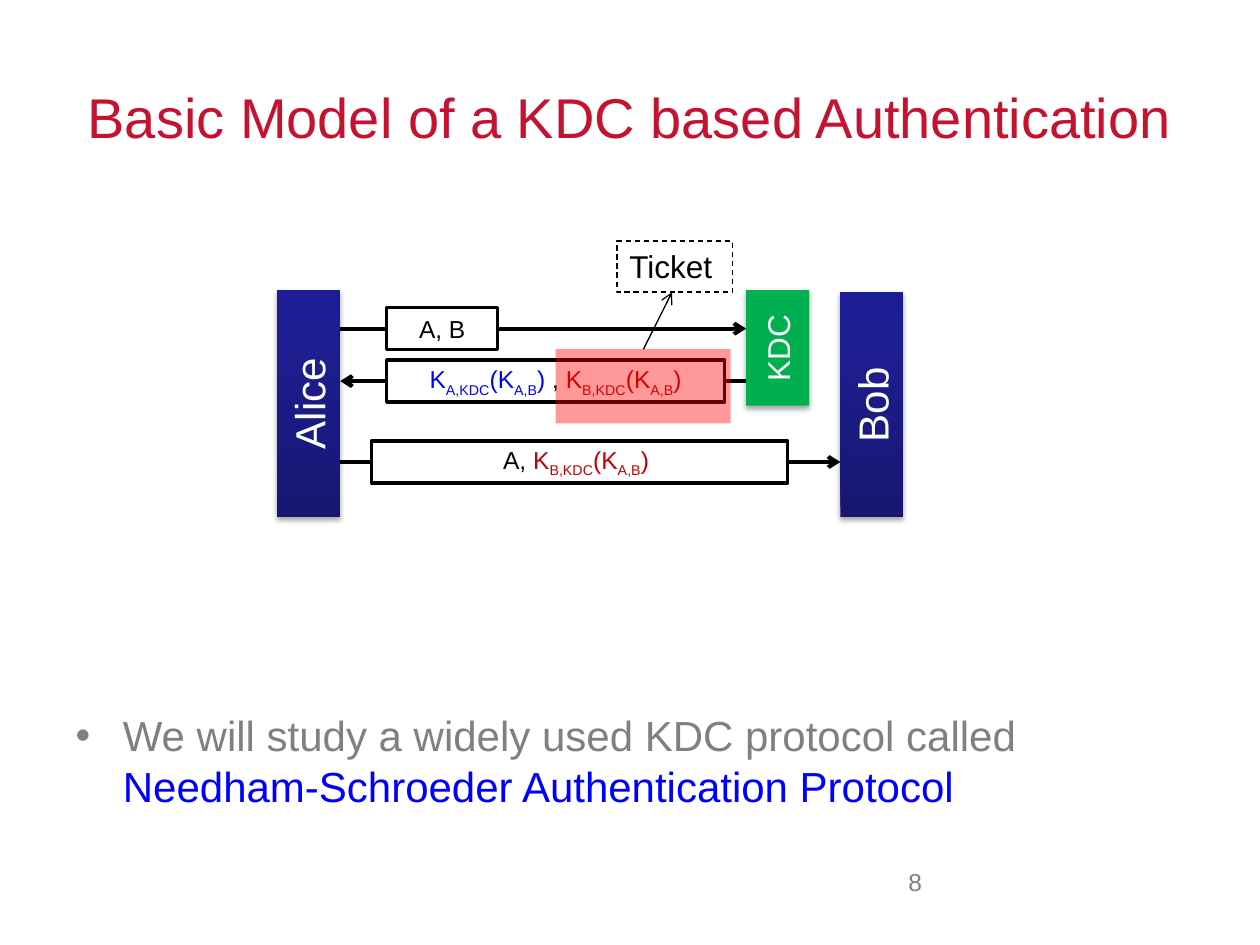
from pptx import Presentation
from pptx.dml.color import RGBColor
from pptx.enum.dml import MSO_LINE
from pptx.enum.shapes import MSO_CONNECTOR, MSO_SHAPE
from pptx.enum.text import MSO_ANCHOR, MSO_AUTO_SIZE, PP_ALIGN
from pptx.oxml import parse_xml
from pptx.oxml.ns import nsdecls
from pptx.util import Pt

RECT = MSO_SHAPE.RECTANGLE
LINE = MSO_CONNECTOR.STRAIGHT
DASH = MSO_LINE.DASH
LEFT, MID, RIGHT = PP_ALIGN.LEFT, PP_ALIGN.CENTER, PP_ALIGN.RIGHT
TOP, CORE = MSO_ANCHOR.TOP, MSO_ANCHOR.MIDDLE
FIXED = MSO_AUTO_SIZE.NONE

HUES = {
    "title": "C41230", "gray": "808080", "blue": "0000FF", "red": "C00000",
    "black": "000000", "white": "FFFFFF", "green": "00B050", "mark": "FF0000",
}
NAVY = {0: "171771", 80: "1E1E93", 100: "1C1C96"}
BAR = 36
ALICE, KDC, BOB = 158.4, 426.4, 480.2
START = ALICE + BAR
BOX = 24


def put(item, **vals):
    """Set each named value on an item."""
    for key, val in vals.items():
        setattr(item, key, val)


def rgb(name):
    """Look up a colour."""
    return RGBColor.from_string(HUES[name])


def node(tag, body="", **atts):
    """Make a drawing element."""
    text = "".join(f' {key}="{val}"' for key, val in atts.items())
    return parse_xml(f"<a:{tag} {nsdecls('a')}{text}>{body}</a:{tag}>")


def place(item, x, y, w, h):
    """Move and size an item."""
    put(item, left=Pt(x), top=Pt(y), width=Pt(w), height=Pt(h))


def write(shape, parts, size, align=MID, anchor=CORE):
    """Write coloured parts, with subscripts between underscores."""
    frame = shape.text_frame
    put(frame, word_wrap=True, auto_size=FIXED, vertical_anchor=anchor)
    para = frame.paragraphs[0]
    para.alignment = align
    for text, hue in parts:
        for spot, bit in enumerate(text.split("_")):
            run = para.add_run()
            run.text = bit
            put(run.font, name="Arial", size=Pt(size))
            run.font.color.rgb = rgb(hue)
            if spot % 2:
                run.font._element.set("baseline", "-25000")
    return para


def block(slide, x, y, w, h, fill=None, line=0):
    """Draw a plain rectangle."""
    shape = slide.shapes.add_shape(RECT, Pt(x), Pt(y), Pt(w), Pt(h))
    shape.shadow.inherit = False
    if fill:
        shape.fill.solid()
        shape.fill.fore_color.rgb = rgb(fill)
    else:
        shape.fill.background()
    if line:
        shape.line.width = Pt(line)
        shape.line.color.rgb = rgb("black")
    else:
        shape.line.fill.background()
    return shape


def party(slide, name, x, y, h, size, fill=None):
    """Draw a shaded bar with upright text."""
    shape = block(slide, x, y, BAR, h, fill)
    props = shape._element.spPr
    if not fill:
        stops = "".join(
            f'<a:gs pos="{pos * 1000}"><a:srgbClr val="{hue}"/></a:gs>'
            for pos, hue in NAVY.items())
        body = f'<a:gsLst>{stops}</a:gsLst><a:lin ang="16200000" scaled="0"/>'
        old = props.find("{*}noFill")
        props.replace(old, node("gradFill", body, rotWithShape=1))
    tint = '<a:srgbClr val="000000"><a:alpha val="35000"/></a:srgbClr>'
    props.find("{*}effectLst").append(node(
        "outerShdw", tint, blurRad=Pt(3.1), dist=Pt(1.8), dir=5400000,
        rotWithShape=0))
    write(shape, [(name, "white")], size)
    shape.text_frame._txBody.bodyPr.set("vert", "vert270")


def arrow(slide, x, y, x2, y2, width=2.25):
    """Draw a line with an open head at its end."""
    line = slide.shapes.add_connector(LINE, Pt(x), Pt(y), Pt(x2), Pt(y2))
    line.line.width = Pt(width)
    line.line.color.rgb = rgb("black")
    line.line._get_or_add_ln().append(node("tailEnd", type="arrow"))
    line._element.spPr.append(node("effectLst"))


def send(slide, ends, y, x, w, parts):
    """Draw an arrow and the message box on it."""
    arrow(slide, ends[0], y, ends[1], y)
    box = block(slide, x, y - BOX / 2, w, BOX, "white", 2)
    write(box, parts, 14)


def ticket(slide):
    """Mark the ticket and label it."""
    mark = block(slide, 317.6, 199.6, 100, 42.4, "mark")
    hue = mark._element.spPr.find(".//{*}srgbClr")
    hue.append(node("alpha", val=40000))
    arrow(slide, 367.7, 199.6, 384, 167, 0.75)
    label = block(slide, 352.6, 137.8, 66, 29.2, line=0.75)
    label.line.dash_style = DASH
    write(label, [("Ticket", "black")], 18, LEFT, TOP)


def words(slide):
    """Fill the title, the bullet and the page number."""
    title, body = slide.shapes.title, slide.placeholders[1]
    place(title, 36, 21.6, 648, 90)
    write(title, [("Basic Model of a KDC based Authentication", "title")], 32)
    place(body, 36, 402, 648, 80.6)
    para = write(body, [
        ("We will study a widely used KDC protocol called ", "gray"),
        ("Needham-Schroeder Authentication Protocol", "blue")], 24, LEFT, TOP)
    props = para._p.get_or_add_pPr()
    put(para, space_before=Pt(0))
    for key, val in {"marL": Pt(27), "indent": Pt(-27)}.items():
        props.set(key, str(val))
    props.append(node("buChar", char="•"))
    page = slide.shapes.add_textbox(Pt(468), Pt(492), Pt(66), Pt(37.4))
    write(page, [("8", "gray")], 14, RIGHT, TOP)


def main():
    """Build the slide."""
    deck = Presentation()
    put(deck, slide_width=Pt(720), slide_height=Pt(540))
    slide = deck.slides.add_slide(deck.slide_layouts[1])
    words(slide)
    party(slide, "Alice", ALICE, 165.8, 129.6, 24)
    party(slide, "KDC", KDC, 165.8, 66, 18, "green")
    pass_on = ("K_B,KDC_(K_A,B_)", "red")
    send(slide, (START, KDC), 187.8, 221, 63.4, [("A, B", "black")])
    send(slide, (KDC, START), 217.8, 221, 193,
         [("K_A,KDC_(K_A,B_) ", "blue"), (", ", "black"), pass_on])
    send(slide, (START, BOB), 264, 212.2, 237.8,
         [("A, ", "black"), pass_on, (" ", "red")])
    party(slide, "Bob", BOB, 167, 128.6, 24)
    ticket(slide)
    deck.save("out.pptx")


if __name__ == "__main__":
    main()
